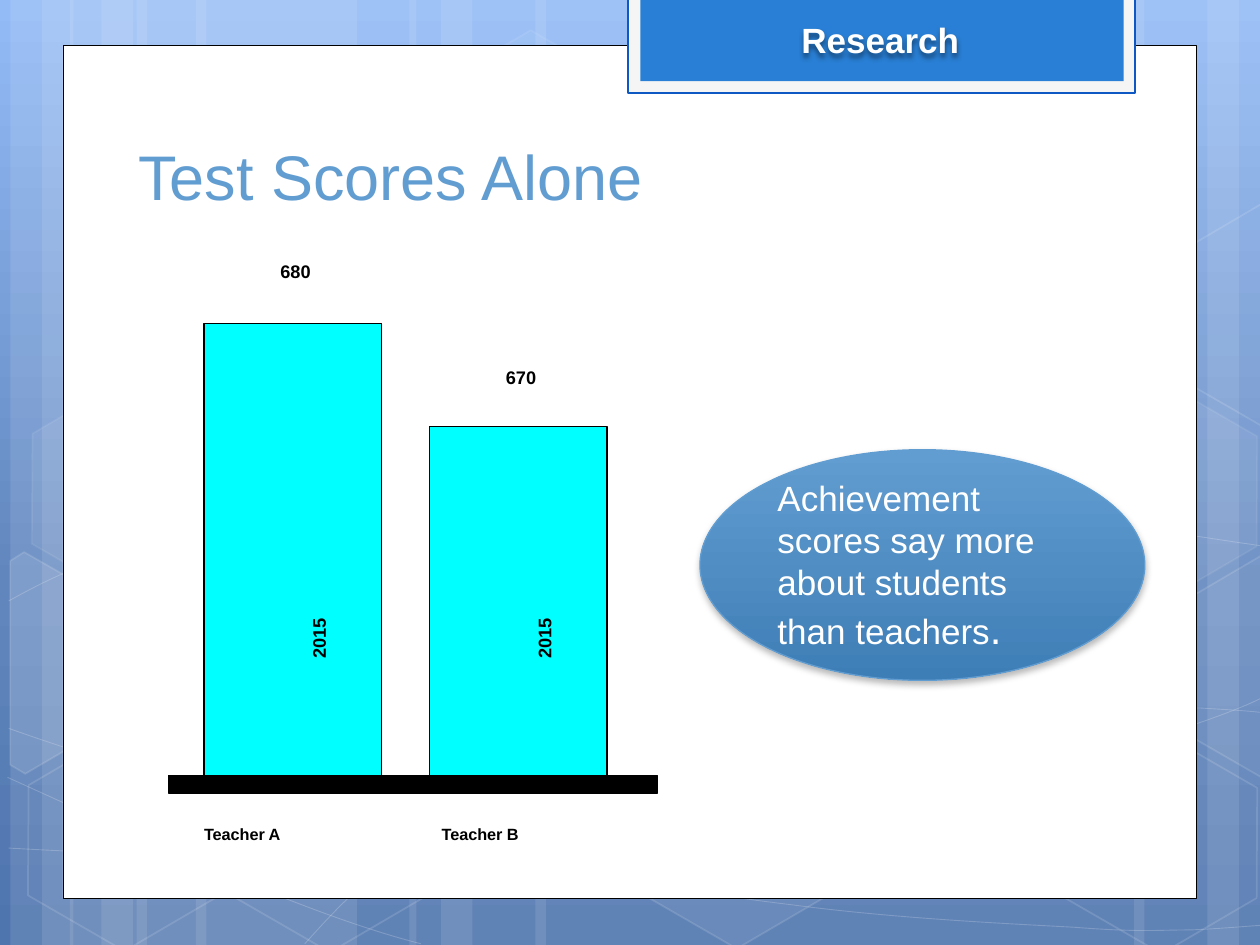
import math

from lxml import etree
from pptx import Presentation
from pptx.dml.color import RGBColor
from pptx.enum import shapes, text
from pptx.oxml import ns
from pptx.util import Pt

KIND = shapes.MSO_SHAPE
ALIGN = text.PP_ALIGN
WHITE, BLACK, SKY = "FFFFFF", "000000", "629DD1"

WAVES = [
    [(5, 484.6), (44, 486.7), (82.8, 488.9), (136.8, 488.2), (190.8, 487.4),
     (257.8, 486), (329.8, 478.8), (401.8, 471.6), (504, 457.9),
     (570.2, 444.2), (635.8, 430.6), (703.4, 409), (725, 396.7)],
    [(5, 343.4), (25.9, 331.9), (46.8, 321.1), (87.1, 310.3), (128.2, 299.5),
     (186.5, 282.2), (249.8, 278.6), (313.9, 273.6), (391.7, 272.9),
     (470.9, 278.6), (550.1, 284.4), (681.8, 306.7), (725, 312.5)],
    [(4.3, 444.2), (91.4, 483.8), (177.8, 523.4), (240.5, 539.3)],
    [(5, 416.2), (27.4, 424.1), (50.4, 432), (92.2, 443.5), (133.9, 454.3),
     (196.6, 472.3), (257, 484.6), (316.8, 496.8), (392.4, 509.8),
     (452.2, 517), (511.9, 524.9), (576, 527.8), (614.2, 529.9),
     (651.6, 532.8), (661.7, 531.4), (680.4, 531.4), (699.1, 530.6),
     (712.1, 529.2), (725, 528.5)],
    [(174.2, 539.3), (187.2, 524.9), (200.2, 510.5), (217.4, 497.5),
     (234.7, 484.6), (259.2, 470.2), (279.4, 460.1), (299.5, 450),
     (311.8, 445.7), (338.4, 438.5), (364.3, 431.3), (412.6, 421.2),
     (437.8, 416.2), (463.7, 411.1), (467.3, 411.1), (489.6, 409.7),
     (511.9, 407.5), (547.2, 405.4), (571.7, 404.6), (596.9, 403.9),
     (637.9, 404.6), (637.9, 404.6), (654, 404.6), (670, 404.6),
     (686.2, 404.6), (699.1, 405.4), (711.4, 406.1), (717.8, 406.8),
     (724.3, 407.5), (722.2, 406.8), (724.3, 407.5)],
]
CELLS = [(240.5, 25.9, 4, 8), (357.8, 424.1, 6, 12), (7.9, 425.5, 0, 12),
         (10.1, 224.6, 7, 8), (125.3, 426.2, 0, 12), (542.2, 326.2, 10, 12),
         (600.5, 427, 0, 12), (600.5, 226.1, 7, 8)]
LEFT = [(-20.1, -64.8), (-12.2, -69.8), (43.2, -38.2), (42.5, 25.2),
        (-11.5, 56.9), (-20.1, 51.8)]
RIGHT = [(-42.5, -25.2), (11.5, -56.9), (17.3, -53.3), (17.3, 67),
         (12.2, 69.8), (-42.5, 38.2)]


def tint(code):
    return RGBColor.from_string(code)


def sub(node, tag, **attrs):
    return etree.SubElement(node, ns.qn("a:" + tag), attrs)


def fade(fill, code, alpha):
    fill.solid()
    fill.fore_color.rgb = tint(code)
    if alpha < 100:
        node = next(fill._xPr.iter(ns.qn("a:srgbClr")))
        sub(node, "alpha", val=str(alpha * 1000))


def style(shape, fill=None, line=None, width=0.75, alpha=100, edge=100):
    shape.shadow.inherit = False
    if fill and alpha:
        fade(shape.fill, fill, alpha)
    else:
        shape.fill.background()
    if line:
        fade(shape.line.fill, line, edge)
        shape.line.width = Pt(width)
    else:
        shape.line.fill.background()
    return shape


def block(page, kind, box, **look):
    return style(page.shapes.add_shape(kind, *map(Pt, box)), **look)


def trace(page, spots, closed, **look):
    ends = [(Pt(x), Pt(y)) for x, y in spots]
    pen = page.shapes.build_freeform(*ends[0])
    pen.add_line_segments(ends[1:], close=closed)
    return style(pen.convert_to_shape(), line=WHITE, **look)


def bend(shape):
    legs = list(shape.element.iter(ns.qn("a:lnTo")))
    route = legs[0].getparent()
    for i in range(0, len(legs), 3):
        curve = sub(route, "cubicBezTo")
        for leg in legs[i:i + 3]:
            curve.append(leg[0])
            route.remove(leg)


def shard(page, spots, mid, alpha):
    c, s = math.cos(math.pi / 6), math.sin(math.pi / 6)
    flat = [(mid[0] + c * a + s * b, mid[1] - s * a + c * b) for a, b in spots]
    trace(page, flat, True, fill=WHITE, alpha=alpha, width=1, edge=12).rotation = 30


def grade(fill, root, stops):
    fill.gradient()
    fill.gradient_angle = 270
    ramp = next(root.iter(ns.qn("a:gsLst")))
    for stop in list(ramp):
        ramp.remove(stop)
    for place, code in stops:
        sub(sub(ramp, "gs", pos=str(place * 1000)), "srgbClr", val=code)


def cast(shape, alpha, blur, dist):
    shape.shadow.inherit = False
    node = next(shape.element.iter(ns.qn("a:effectLst")))
    glow = sub(node, "outerShdw", blurRad=str(Pt(blur)), dist=str(Pt(dist)),
               dir="5400000", algn="ctr", rotWithShape="0")
    sub(sub(glow, "srgbClr", val=BLACK), "alpha", val=str(alpha * 1000))


def write(frame, words, size, code, bold=False, align=ALIGN.LEFT):
    frame.word_wrap = True
    para = frame.paragraphs[0]
    para.alignment = align
    para.font.name, para.font.size, para.font.bold = "Arial", Pt(size), bold
    para.font.color.rgb = tint(code)
    run = para.add_run()
    run.text = words
    return para, run


def label(page, box, words, size, align=ALIGN.CENTER, turn=0):
    area = page.shapes.add_textbox(*map(Pt, box))
    area.rotation = turn
    area.text_frame.auto_size = text.MSO_AUTO_SIZE.SHAPE_TO_FIT_TEXT
    para, run = write(area.text_frame, words, size, BLACK, True, align)
    para.space_before = Pt(size / 4 if turn else size / 2)
    run._r.get_or_add_rPr().set("baseline", "-25000")


def scene(page, box):
    x, y, w, h = box
    grade(page.background.fill, page.element,
          [(0, "93BBF6"), (62, "6186BE"), (100, "4F75AE")])
    bands = [(left + gap, wide) for left, last in ((6, 126), (40, 126), (234, 222))
             for gap, wide in ((72, last), (0, 36), (18, 60))]
    bands += [(w + 6 - gap - wide, wide) for gap, wide in ((72, 126), (0, 36), (18, 60))]
    for left, wide in bands:
        block(page, KIND.RECTANGLE, (x + left, y, wide, h), fill=WHITE, alpha=10)
    for wave in WAVES:
        bend(trace(page, [(x + a, y + b) for a, b in wave], False, width=0.5, edge=20))
    for left, top, alpha, edge in CELLS:
        cell = block(page, KIND.HEXAGON, (x + left, y + top, 126, 109.4), fill=WHITE,
                     alpha=alpha, line=WHITE, width=1, edge=edge)
        cell.rotation = 30
        cell.adjustments[0], cell.adjustments[1] = 0.285, 1.155
    for spots, a, b, alpha in ((LEFT, 25.9, 385.2, 10), (RIGHT, 709.2, 374.4, 4),
                               (RIGHT, 709.2, 173.5, 0)):
        shard(page, spots, (x + a, y + b), alpha)
    block(page, KIND.RECTANGLE, (x + 36, y + 26, w - 72, 487.2),
          fill=WHITE, line=BLACK, width=0.5)


def tab(page, box):
    x, y, w, h = box
    block(page, KIND.RECTANGLE, box, fill="F5F5F5", line="0E58C4", width=1.25)
    block(page, KIND.RECTANGLE, (x + 6.9, y - 1.4, w - 13.4, h - 5.5), fill="297FD5")
    area = page.shapes.add_textbox(*map(Pt, (x + 14, y + 8.6, 260, 31.7)))
    write(area.text_frame, "Research", 20, WHITE, True, ALIGN.CENTER)
    cast(area, 43, 3, 2)


def title(page, box):
    area = page.shapes.add_textbox(*map(Pt, box))
    area.text_frame.vertical_anchor = text.MSO_ANCHOR.BOTTOM
    write(area.text_frame, "Test Scores Alone", 36, SKY)


def graph(page, box):
    x, y, w, h = box
    bars = [("Teacher A", "680", 51.8, 260, 0), ("Teacher B", "670", 110.7, 208, 60.5)]
    for i, (name, score, top, tall, drop) in enumerate(bars):
        left = x + 20.3 + 128.8 * i
        block(page, KIND.RECTANGLE, (left, y + top, 101.5, tall), fill="00FFFF", line=BLACK)
        label(page, (x + 13.3 + 135.8 * i, y + 323.6, 108.7, 38.2), name, 16, ALIGN.LEFT)
        label(page, (left - 9.2, y + 215.3, 138.2, 32.4), "2015", 18, turn=270)
        label(page, (left + 21.8, y + drop, 61.2, 41.8), score, 18)
    block(page, KIND.RECTANGLE, (x, y + 310, w, 10), fill=BLACK, line=BLACK)


def bubble(page, box):
    oval = block(page, KIND.OVAL, box, line=SKY)
    grade(oval.fill, oval.element, [(0, SKY), (100, "3E7EB6")])
    cast(oval, 28, 4, 2)
    frame = oval.text_frame
    frame.vertical_anchor = text.MSO_ANCHOR.MIDDLE
    para = write(frame, "Achievement scores say more about students than teachers",
                 20, WHITE)[0]
    para.space_before = Pt(10)
    dot = para.add_run()
    dot.text = "."
    dot.font.size = Pt(24)


def main():
    deck = Presentation()
    deck.slide_width, deck.slide_height = Pt(720), Pt(540)
    page = deck.slides.add_slide(deck.slide_layouts[6])
    scene(page, (0, 0, 720, 540))
    tab(page, (359, -1.4, 289.6, 54.7))
    title(page, (72, 77.8, 648, 47.5))
    graph(page, (96.2, 133.2, 279.4, 361))
    bubble(page, (400, 257, 254.2, 131.8))
    deck.save("out.pptx")


if __name__ == "__main__":
    main()
